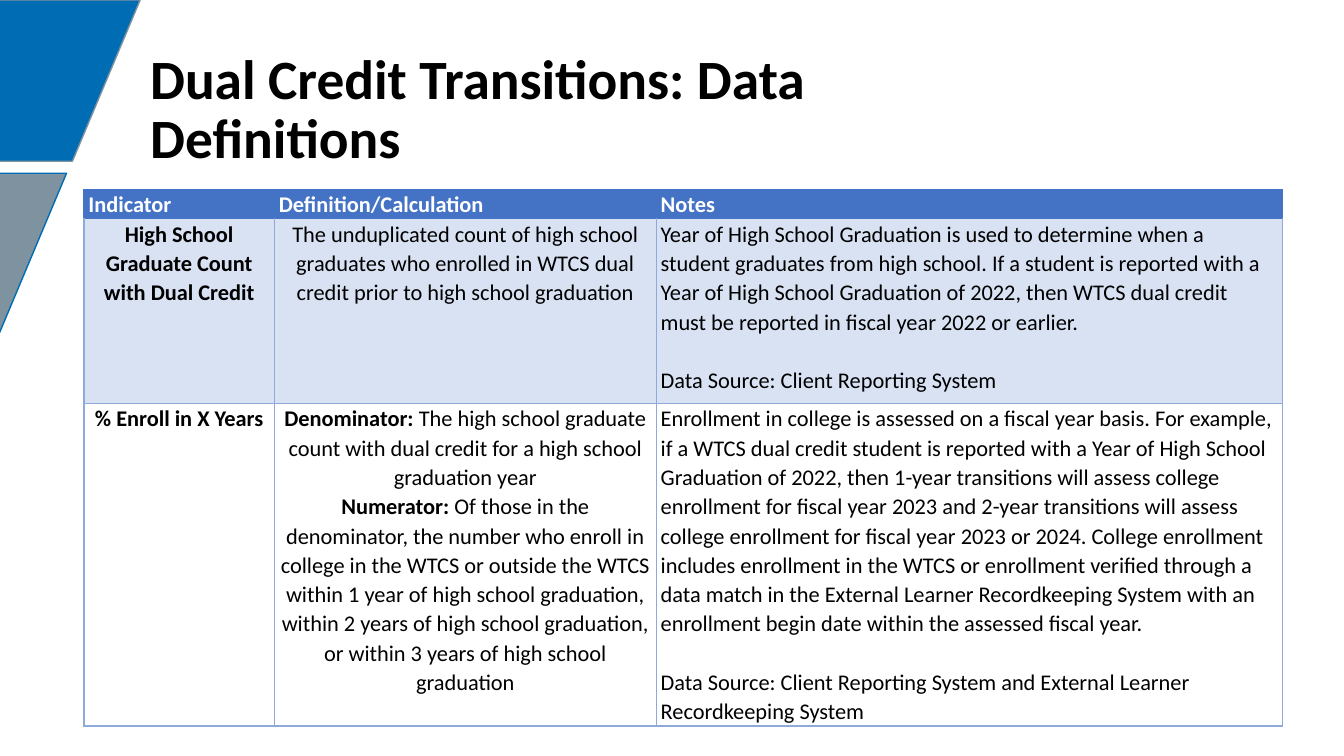
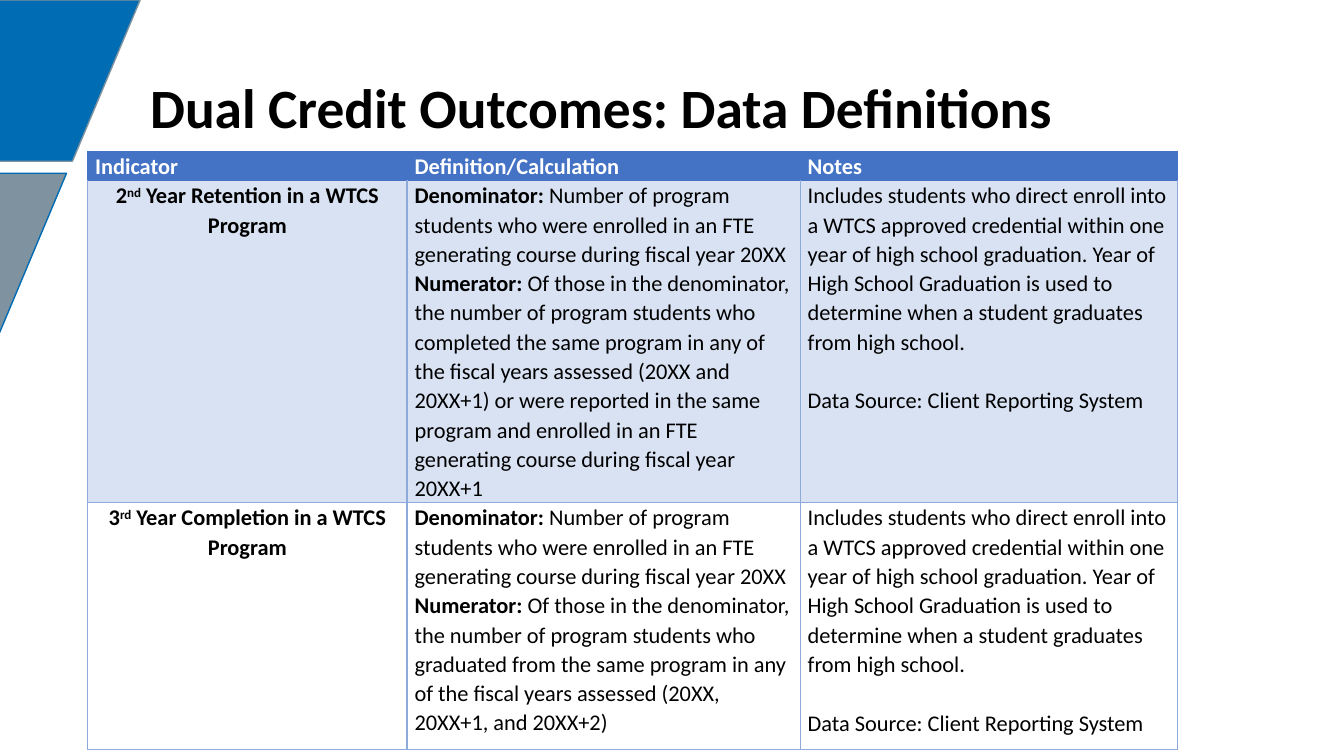
from lxml.etree import SubElement
from pptx import Presentation
from pptx.dml.color import RGBColor
from pptx.enum.shapes import MSO_SHAPE as Preset
from pptx.enum.text import MSO_ANCHOR as Anchor, MSO_AUTO_SIZE as AutoSize, PP_ALIGN as Align
from pptx.oxml.ns import qn
from pptx.util import Pt

FONT = "Calibri"
BLUE, GRAY = "006CB3", "7E929F"
HEADER, GRID, BAND = "4472C4", "8EAADB", "D9E2F3"
BLACK, WHITE = "000000", "FFFFFF"
BODY_SIZE, BODY_SPACING, NOTE_GAP = 16, 1.07, 21
TITLE_BOX = (100, 44, 664, 70.6)
BAND_SIZE = (241.9, 115.2)
BANDS = [(-141.8, 0, BLUE, GRAY), (-194.4, 123.8, GRAY, BLUE)]

HEADINGS = ["Indicator", "Definition/Calculation", "Notes"]
SOURCE = "Data Source: Client Reporting System"
ENROLLED = (" Number of program students who were enrolled in an FTE generating "
            "course during fiscal year 20XX")
DIRECT_ENROLL = (
    "Includes students who direct enroll into a WTCS approved credential within one year of "
    "high school graduation. Year of High School Graduation is used to determine when a "
    "student graduates from high school.")


def fraction(denominator, numerator):
    return [[("Denominator:", "bold"), (denominator, "")],
            [("Numerator: ", "bold"), (numerator, "")]]


def ordinal(number, suffix, rest):
    return [[(number, "bold"), (suffix, "super"), (rest, "bold")]]


def plain(*paragraphs, style=""):
    return [[(text, style)] for text in paragraphs]


SLIDES = [
    {
        "title": "Dual Credit Transitions: Data Definitions",
        "origin": (60, 135.4),
        "columns": [136, 272.8, 447.6],
        "heights": [18, 132, 226],
        "margin": 3.2,
        "alignments": [Align.CENTER, Align.CENTER, Align.LEFT],
        "rows": [
            [
                plain("High School Graduate Count with Dual Credit", style="bold"),
                plain("The unduplicated count of high school graduates who enrolled in WTCS "
                      "dual credit prior to high school graduation"),
                plain("Year of High School Graduation is used to determine when a student "
                      "graduates from high school. If a student is reported with a Year of "
                      "High School Graduation of 2022, then WTCS dual credit must be reported "
                      "in fiscal year 2022 or earlier.", SOURCE),
            ],
            [
                plain("% Enroll in X Years", style="bold"),
                fraction(" The high school graduate count with dual credit for a high school "
                         "graduation year",
                         "Of those in the denominator, the number who enroll in college in the "
                         "WTCS or outside the WTCS within 1 year of high school graduation, "
                         "within 2 years of high school graduation, or within 3 years of high "
                         "school graduation"),
                plain("Enrollment in college is assessed on a fiscal year basis. For example, "
                      "if a WTCS dual credit student is reported with a Year of High School "
                      "Graduation of 2022, then 1-year transitions will assess college "
                      "enrollment for fiscal year 2023 and 2-year transitions will assess "
                      "college enrollment for fiscal year 2023 or 2024. College enrollment "
                      "includes enrollment in the WTCS or enrollment verified through a data "
                      "match in the External Learner Recordkeeping System with an enrollment "
                      "begin date within the assessed fiscal year.",
                      SOURCE + " and External Learner Recordkeeping System"),
            ],
        ],
    },
    {
        "title": "Dual Credit Outcomes: Data Definitions",
        "origin": (62.6, 108),
        "columns": [228.2, 280.8, 269.3],
        "heights": [19, 230, 176.4],
        "margin": 5.4,
        "alignments": [Align.CENTER, Align.LEFT, Align.LEFT],
        "rows": [
            [
                ordinal("2", "nd", " Year Retention in a WTCS Program"),
                fraction(ENROLLED,
                         "Of those in the denominator, the number of program students who "
                         "completed the same program in any of the fiscal years assessed "
                         "(20XX and 20XX+1) or were reported in the same program and enrolled "
                         "in an FTE generating course during fiscal year 20XX+1"),
                plain(DIRECT_ENROLL, SOURCE),
            ],
            [
                ordinal("3", "rd", " Year Completion in a WTCS Program"),
                fraction(ENROLLED,
                         "Of those in the denominator, the number of program students who "
                         "graduated from the same program in any of the fiscal years assessed "
                         "(20XX, 20XX+1, and 20XX+2)"),
                plain(DIRECT_ENROLL, SOURCE),
            ],
        ],
    },
]


def color(value):
    return RGBColor.from_string(value)


def format_font(font, size, value, bold):
    font.name = FONT
    font.size = Pt(size)
    font.bold = bold
    font.color.rgb = color(value)


def place(shape, box):
    shape.left, shape.top, shape.width, shape.height = map(Pt, box)


def add_bands(layout, slide):
    tree = layout.shapes._spTree
    for index, (left, top, fill, line) in enumerate(BANDS):
        band = slide.shapes.add_shape(
            Preset.FLOWCHART_DATA, *map(Pt, (left, top, *BAND_SIZE)))
        band.name = f"Corner band {index + 1}"
        band.shadow.inherit = False
        band.fill.solid()
        band.fill.fore_color.rgb = color(fill)
        band.line.color.rgb = color(line)
        band.line.width = Pt(1)
        band._element.nvSpPr.cNvPr.set("id", str(100 + index))
        tree.insert(2 + index, band._element)


def set_title(slide, text):
    frame = slide.shapes.title.text_frame
    frame.text = text
    frame.auto_size = AutoSize.NONE
    frame.word_wrap = True
    frame.vertical_anchor = Anchor.MIDDLE
    paragraph = frame.paragraphs[0]
    paragraph.alignment = Align.LEFT
    paragraph.line_spacing = 0.9
    format_font(paragraph.runs[0].font, 39.6, BLACK, True)


def set_borders(cell, sides):
    properties = cell._tc.get_or_add_tcPr()
    for side, value in sides.items():
        line = SubElement(properties, qn(f"a:ln{side}"), w=str(Pt(1)))
        fill = SubElement(line, qn("a:solidFill"))
        SubElement(fill, qn("a:srgbClr"), val=value)


def fill_cell(cell, paragraphs, alignment, text_color, margin):
    cell.margin_left = cell.margin_right = Pt(margin)
    cell.margin_top = cell.margin_bottom = 0
    cell.vertical_anchor = Anchor.TOP
    frame = cell.text_frame
    for index, runs in enumerate(paragraphs):
        paragraph = frame.add_paragraph() if index else frame.paragraphs[0]
        paragraph.alignment = alignment
        paragraph.line_spacing = BODY_SPACING
        if index and len(runs) == 1:
            paragraph.space_before = Pt(NOTE_GAP)
        for text, style in runs:
            run = paragraph.add_run()
            run.text = text
            format_font(run.font, BODY_SIZE, text_color, bool(style))
            if style == "super":
                run.font._element.set("baseline", "30000")


def add_definitions(slide, content):
    columns, heights = content["columns"], content["heights"]
    rows = [[plain(text, style="bold") for text in HEADINGS], *content["rows"]]
    box = (*content["origin"], sum(columns), sum(heights))
    table = slide.shapes.add_table(len(rows), len(columns), *map(Pt, box)).table
    table.horz_banding = False
    for column, width in zip(table.columns, columns):
        column.width = Pt(width)
    for row_index, row in enumerate(rows):
        table.rows[row_index].height = Pt(heights[row_index])
        heading = row_index == 0
        edge = HEADER if heading else GRID
        top = HEADER if row_index < 2 else GRID
        fill = (HEADER, BAND, None)[row_index]
        for column_index, paragraphs in enumerate(row):
            cell = table.cell(row_index, column_index)
            alignment = Align.LEFT if heading else content["alignments"][column_index]
            fill_cell(cell, paragraphs, alignment, WHITE if heading else BLACK,
                      content["margin"])
            set_borders(cell, {"L": edge, "R": edge, "T": top, "B": edge})
            if fill:
                cell.fill.solid()
                cell.fill.fore_color.rgb = color(fill)
            else:
                cell.fill.background()


def main():
    presentation = Presentation()
    presentation.slide_width, presentation.slide_height = Pt(960), Pt(540)
    layout = presentation.slide_layouts[5]
    place(layout.placeholders[0], TITLE_BOX)
    for index, content in enumerate(SLIDES):
        slide = presentation.slides.add_slide(layout)
        if index == 0:
            add_bands(layout, slide)
        set_title(slide, content["title"])
        add_definitions(slide, content)
    presentation.save("out.pptx")


if __name__ == "__main__":
    main()
